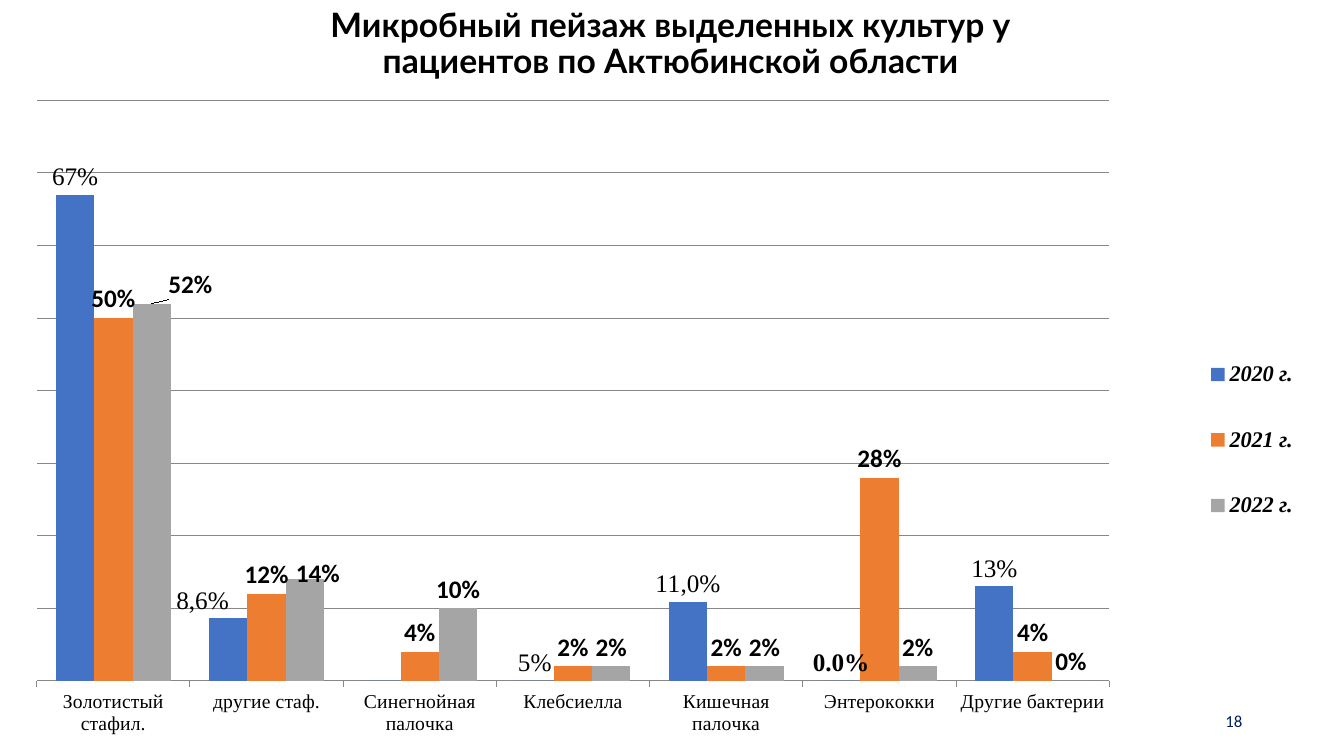
from lxml import etree
from pptx import Presentation
from pptx.chart.data import CategoryChartData
from pptx.dml.color import RGBColor
from pptx.enum.chart import XL_CHART_TYPE, XL_LABEL_POSITION, XL_LEGEND_POSITION, XL_TICK_MARK
from pptx.enum.text import MSO_ANCHOR, PP_ALIGN
from pptx.oxml.ns import qn
from pptx.util import Inches, Pt

COLUMNS = XL_CHART_TYPE.COLUMN_CLUSTERED
OUTSIDE_END = XL_LABEL_POSITION.OUTSIDE_END
LEGEND_RIGHT = XL_LEGEND_POSITION.RIGHT
TICK_OUT, TICK_NONE = XL_TICK_MARK.OUTSIDE, XL_TICK_MARK.NONE
CENTER, RIGHT, MIDDLE = PP_ALIGN.CENTER, PP_ALIGN.RIGHT, MSO_ANCHOR.MIDDLE

# Content
TITLE = "Микробный пейзаж выделенных культур у пациентов по Актюбинской области"
PAGE_NUMBER = "18"
CATEGORIES = ["Золотистый стафил.", "другие стаф.", "Синегнойная палочка", "Клебсиелла",
              "Кишечная палочка", "Энтерококки", "Другие бактерии"]
# Labels: point -> own text ("" hides it); moves: point -> shift as a share of the chart
SERIES = [
    {"name": "2020 г.", "values": [0.67, 0.086, 0, 0, 0.109, 0, 0.13],
     "color": "4472C4", "format": "0.0%", "font": "serif_label",
     "labels": {0: "67%", 1: "8,6%", 2: "", 3: "5%", 4: "11,0%", 6: "13%"},
     "moves": {1: (-0.02, 0)}},
    {"name": "2021 г.", "values": [0.5, 0.12, 0.04, 0.02, 0.02, 0.28, 0.04],
     "color": "ED7D31", "format": "0%", "font": "label", "labels": {}, "moves": {}},
    {"name": "2022 г.", "values": [0.52, 0.14, 0.1, 0.02, 0.02, 0.02, 0],
     "color": "A5A5A5", "format": "0%", "font": "label", "labels": {},
     "moves": {0: (0.03, 0), 1: (0.01, 0.02)}},
]

# Placement: left, top, width, height
TITLE_BOX = (2.35, 0.2, 8.6, 0.48)
NUMBER_BOX = (9.42, 6.95, 3, 0.4)
CHART_BOX = (0.36, 0.97, 12.76, 6.53)
PLOT_SHARE = (0, 0.004, 0.834, 0.882)
LEGEND_SHARE = (0.9, 0.34, 0.09, 0.36)

THEME = {
    "title": {"name": "Lato", "size": 24, "bold": True, "color": "000000"},
    "number": {"name": "Calibri", "size": 12, "color": "002060"},
    "chart": {"name": "Calibri", "size": 18, "color": "000000"},
    "axis": {"name": "Times New Roman", "size": 14, "color": "000000"},
    "legend": {"name": "Times New Roman", "size": 16, "bold": True, "italic": True,
               "color": "000000"},
    "label": {"name": "Calibri", "size": 18, "bold": True, "color": "000000"},
    "serif_label": {"name": "Times New Roman", "size": 18, "bold": True, "color": "000000"},
    "own_label": {"name": "Times New Roman", "size": 18, "bold": False, "color": "000000"},
    "line": "878787",
}


def style_font(font, style):
    for key, value in THEME[style].items():
        if key == "color":
            font.color.rgb = RGBColor.from_string(value)
        else:
            setattr(font, key, Pt(value) if key == "size" else value)


def style_line(line):
    line.color.rgb = RGBColor.from_string(THEME["line"])
    line.width = Pt(0.75)


def add_text(slide, box, text, style, alignment, spacing=1.0):
    frame = slide.shapes.add_textbox(*map(Inches, box)).text_frame
    frame.word_wrap = True
    frame.vertical_anchor = MIDDLE
    paragraph = frame.paragraphs[0]
    paragraph.alignment = alignment
    paragraph.line_spacing = spacing
    run = paragraph.add_run()
    run.text = text
    style_font(run.font, style)


def set_layout(parent, after, settings):
    """Put a manual layout into a chart part, right after the given child."""
    for old in parent.findall(qn("c:layout")):
        parent.remove(old)
    layout = etree.Element(qn("c:layout"))
    manual = etree.SubElement(layout, qn("c:manualLayout"))
    for tag, value in settings:
        etree.SubElement(manual, qn(f"c:{tag}")).set("val", str(value))
    if after is None:
        parent.insert(0, layout)
    else:
        parent.find(qn(after)).addnext(layout)


def area(share):
    return [("xMode", "edge"), ("yMode", "edge"), *zip("xywh", share)]


def format_series(series, content):
    series.format.fill.solid()
    series.format.fill.fore_color.rgb = RGBColor.from_string(content["color"])
    series.invert_if_negative = False
    labels = series.data_labels
    labels.show_value = True
    labels.number_format = content["format"]
    labels.number_format_is_linked = False
    labels.position = OUTSIDE_END
    style_font(labels.font, content["font"])

    for index in sorted({*content["labels"], *content["moves"]}):
        label = series.points[index].data_label
        text = content["labels"].get(index)
        if text:
            run = label.text_frame.paragraphs[0].add_run()
            run.text = text
            style_font(run.font, "own_label")
        else:
            style_font(label.font, content["font"])
        label.position = OUTSIDE_END
        element = labels._element.find(f"{qn('c:dLbl')}[{qn('c:idx')}][@val]")
        element = next(item for item in labels._element.findall(qn("c:dLbl"))
                       if item.find(qn("c:idx")).get("val") == str(index))
        if text == "":
            element.find(qn("c:showVal")).set("val", "0")
        if index in content["moves"]:
            set_layout(element, "c:idx", zip("xy", content["moves"][index]))


def add_chart(slide):
    data = CategoryChartData()
    data.categories = CATEGORIES
    for content in SERIES:
        data.add_series(content["name"], content["values"], content["format"])
    chart = slide.shapes.add_chart(COLUMNS, *map(Inches, CHART_BOX), data).chart
    chart.has_title = False
    style_font(chart.font, "chart")

    # Columns
    plot = chart.plots[0]
    plot.gap_width = 100
    plot.overlap = 0
    plot.vary_by_categories = False
    for series, content in zip(plot.series, SERIES):
        format_series(series, content)

    # Axes
    category_axis = chart.category_axis
    category_axis.major_tick_mark = TICK_OUT
    category_axis.minor_tick_mark = TICK_NONE
    style_font(category_axis.tick_labels.font, "axis")
    style_line(category_axis.format.line)
    value_axis = chart.value_axis
    for name, value in {"minimum_scale": 0, "maximum_scale": 0.8, "major_unit": 0.1,
                        "has_major_gridlines": True, "visible": False}.items():
        setattr(value_axis, name, value)
    value_axis.tick_labels.number_format = "0.0%"
    value_axis.tick_labels.number_format_is_linked = False
    style_line(value_axis.major_gridlines.format.line)

    # Legend and plot area
    chart.has_legend = True
    chart.legend.position = LEGEND_RIGHT
    chart.legend.include_in_layout = False
    style_font(chart.legend.font, "legend")
    set_layout(chart.legend._element, "c:legendPos", area(LEGEND_SHARE))
    plot_area = chart._chartSpace.chart.plotArea
    set_layout(plot_area, None, [("layoutTarget", "inner"), *area(PLOT_SHARE)])


def main():
    presentation = Presentation()
    presentation.slide_width, presentation.slide_height = Inches(13.33), Inches(7.5)
    slide = presentation.slides.add_slide(presentation.slide_layouts[6])
    add_text(slide, TITLE_BOX, TITLE, "title", CENTER, 0.9)
    add_text(slide, NUMBER_BOX, PAGE_NUMBER, "number", RIGHT)
    add_chart(slide)
    presentation.save("out.pptx")


if __name__ == "__main__":
    main()
